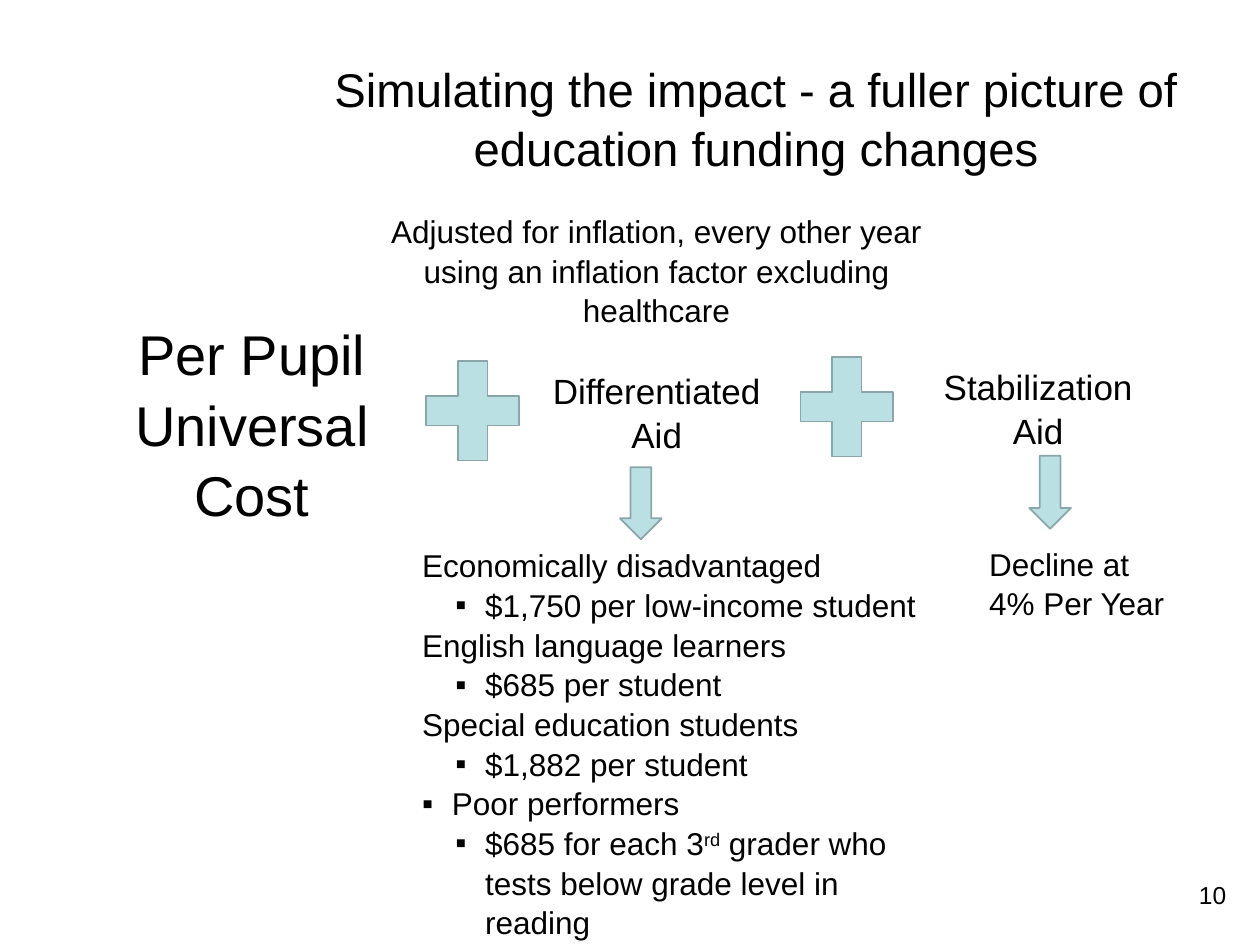
from pptx import Presentation
from pptx.dml.color import RGBColor
from pptx.enum.shapes import MSO_SHAPE
from pptx.enum.text import MSO_ANCHOR, PP_ALIGN
from pptx.oxml.ns import qn
from pptx.util import Cm, Pt

PLUS, ARROW = MSO_SHAPE.MATH_PLUS, MSO_SHAPE.DOWN_ARROW
LEFT, CENTER, RIGHT = PP_ALIGN.LEFT, PP_ALIGN.CENTER, PP_ALIGN.RIGHT
TOP, MIDDLE = MSO_ANCHOR.TOP, MSO_ANCHOR.MIDDLE
FONT, BLACK, FILL, LINE = "Arial", "000000", "BBE0E3", "8AA6A8"
LINE_SPACING = 1.05
BULLET_GAP = 0.6

TITLE = "Simulating the impact - a fuller picture of education funding changes"
TITLE_BOX = (6.35, 0.76, 17.78, 3.18)

LABELS = [
    ((19.05, 17.58, 5.92, 1.32), 14, RIGHT, TOP, ["10"]),
    ((1.27, 7.34, 7.62, 2.34), 32, CENTER, MIDDLE, ["Per Pupil", "Universal Cost"]),
    ((7.62, 4.11, 11.23, 2.57), 18, CENTER, TOP,
     ["Adjusted for inflation, every other year",
      "using an inflation factor excluding healthcare"]),
    ((10.8, 7.16, 4.88, 2.26), 20, CENTER, MIDDLE, ["Differentiated", "Aid"]),
    ((18.49, 7.09, 4.88, 2.26), 20, CENTER, MIDDLE, ["Stabilization Aid"]),
    ((19.69, 10.82, 4.06, 1.8), 18, LEFT, TOP, ["Decline at", "4% Per Year"]),
]

AID_BOX = (8.26, 10.85, 11, 7.95)
AID = [
    (0, False, ["Economically disadvantaged"]),
    (1, True, ["$1,750 per low-income student"]),
    (0, False, ["English language learners"]),
    (1, True, ["$685 per student"]),
    (0, False, ["Special education students"]),
    (1, True, ["$1,882 per student"]),
    (0, True, ["Poor performers"]),
    (1, True, ["$685 for each 3", "rd", " grader who tests below grade level in reading"]),
]
SUPERSCRIPTS = {"rd"}

SHAPES = [
    (PLUS, (8.26, 6.91, 2.54, 2.74)),
    (PLUS, (15.8, 6.83, 2.54, 2.74)),
    (ARROW, (12.5, 9.42, 0.84, 1.45)),
    (ARROW, (20.75, 9.19, 0.84, 1.47)),
]


def color(value):
    return RGBColor.from_string(value)


def add_run(p, text, size):
    r = p.add_run()
    r.text = text
    r.font.name, r.font.size = FONT, Pt(size)
    r.font.color.rgb = color(BLACK)
    return r


def add_paragraph(tf, first, align):
    p = tf.paragraphs[0] if first else tf.add_paragraph()
    p.alignment, p.line_spacing = align, LINE_SPACING
    p.space_before = Pt(0)
    return p


def fill_text(tf, lines, size, align, anchor):
    tf.word_wrap, tf.vertical_anchor = True, anchor
    for i, line in enumerate(lines):
        add_run(add_paragraph(tf, i == 0, align), line, size)


def add_bullet(p, level):
    pPr = p._p.get_or_add_pPr()
    left = 1.27 if level else BULLET_GAP
    pPr.set("marL", str(Cm(left)))
    pPr.set("indent", str(-Cm(BULLET_GAP)))
    pPr.append(pPr.makeelement(qn("a:buFont"), {"typeface": FONT}))
    pPr.append(pPr.makeelement(qn("a:buChar"), {"char": "▪"}))


def add_box(s, box):
    return s.shapes.add_textbox(*map(Cm, box)).text_frame


prs = Presentation()
prs.slide_width, prs.slide_height = Cm(25.4), Cm(19.05)
s = prs.slides.add_slide(prs.slide_layouts[5])

title = s.shapes.title
title.left, title.top, title.width, title.height = map(Cm, TITLE_BOX)
fill_text(title.text_frame, [TITLE], 27, CENTER, MIDDLE)

for box, size, align, anchor, lines in LABELS:
    fill_text(add_box(s, box), lines, size, align, anchor)

tf = add_box(s, AID_BOX)
tf.word_wrap = True
for i, (level, bulleted, runs) in enumerate(AID):
    p = add_paragraph(tf, i == 0, LEFT)
    p.level = level
    if bulleted:
        add_bullet(p, level)
    for text in runs:
        r = add_run(p, text, 18)
        if text in SUPERSCRIPTS:
            r.font._element.set("baseline", "30000")

for kind, box in SHAPES:
    sp = s.shapes.add_shape(kind, *map(Cm, box))
    sp.shadow.inherit = False
    sp.fill.solid()
    sp.fill.fore_color.rgb = color(FILL)
    sp.line.color.rgb = color(LINE)
    sp.line.width = Pt(1)

prs.save("out.pptx")
